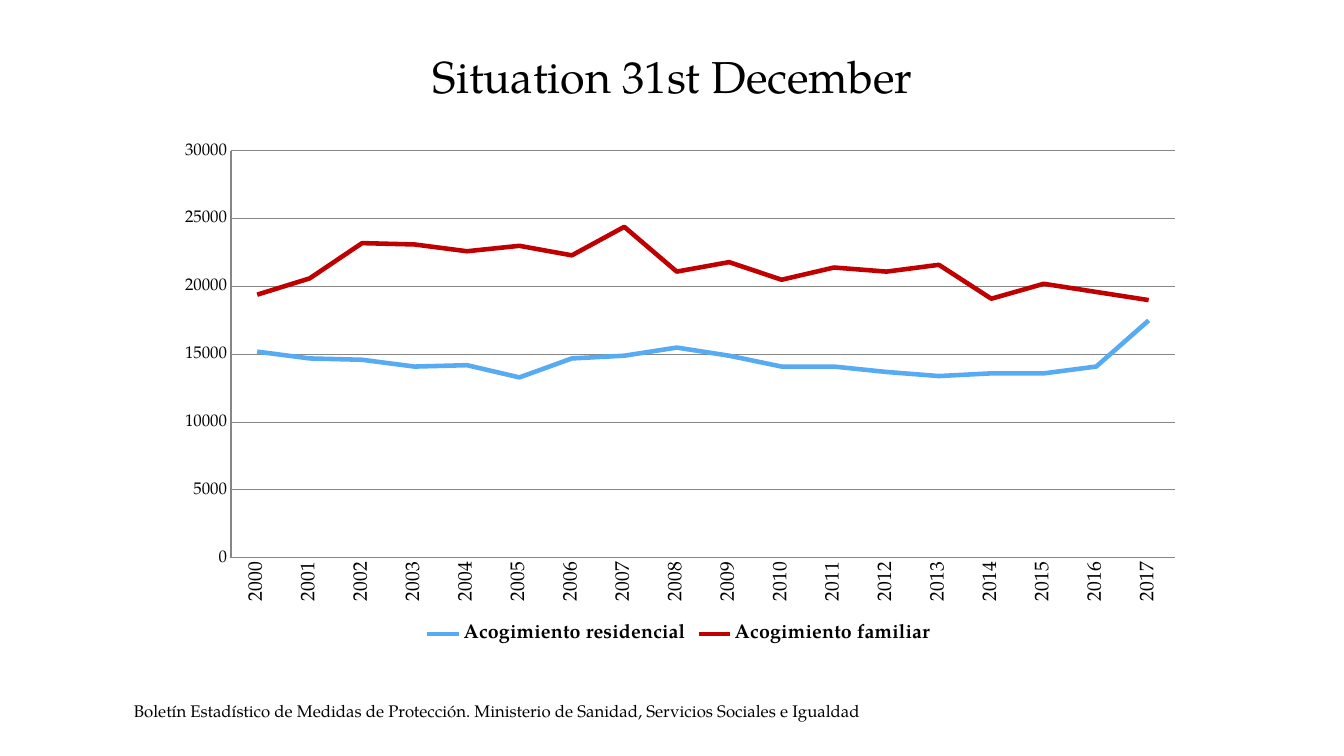
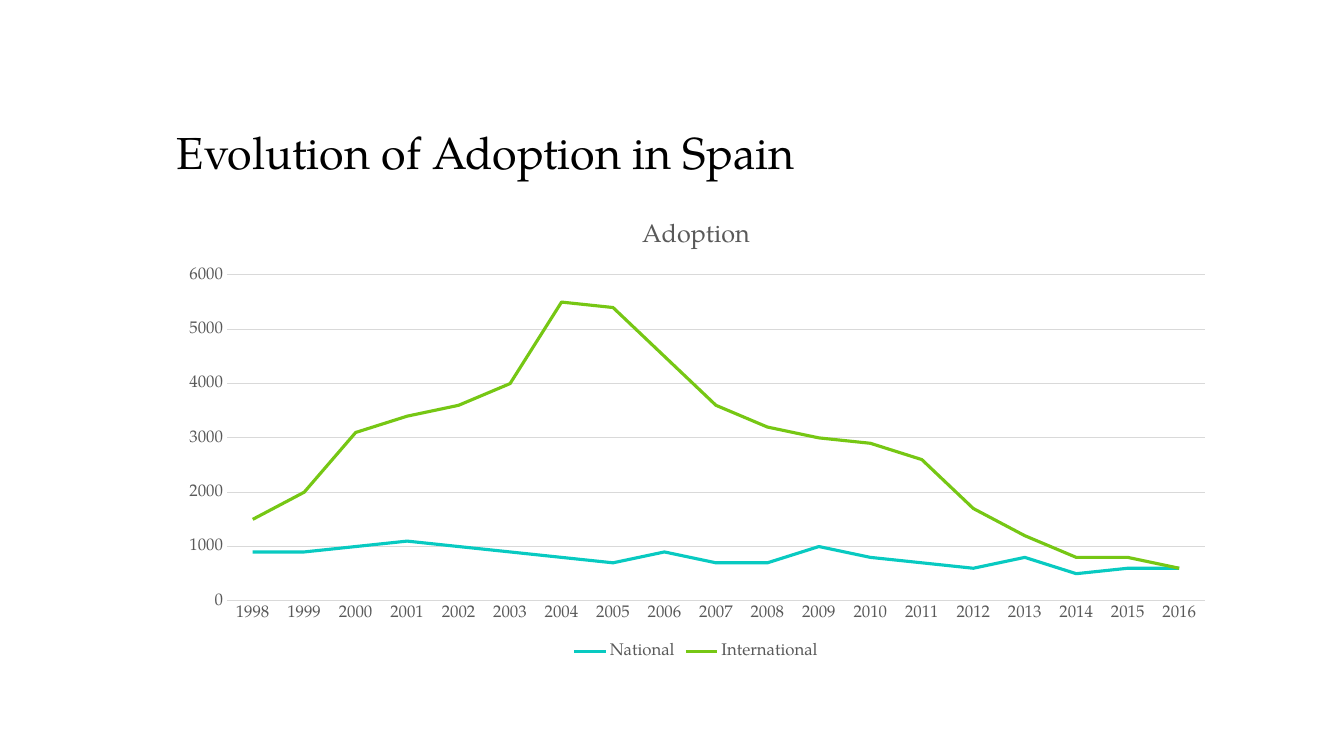
import pptx
import pptx.chart.data
import pptx.dml.color
import pptx.enum.chart
import pptx.enum.text
import pptx.oxml
import pptx.oxml.ns
import pptx.util

PX = 914400 / 100.8  # EMU per px
FONT = "TeX Gyre Pagella"
BLACK, GREY, PALE, MID = "000000", "595959", "D9D9D9", "868686"
XL = pptx.enum.chart
ALIGN = pptx.enum.text.PP_ALIGN
ANCHOR = pptx.enum.text.MSO_ANCHOR


def px(n):
    return pptx.util.Emu(round(n * PX))


def rgb(color):
    return pptx.dml.color.RGBColor.from_string(color)


def set_line(line, color, width):
    line.color.rgb = rgb(color)
    line.width = pptx.util.Pt(width)


class Deck:
    def __init__(self):
        self.prs = pptx.Presentation()
        self.prs.slide_width, self.prs.slide_height = px(1344), px(756)
        self.s = None

    def add_slide(self):
        self.s = self.prs.slides.add_slide(self.prs.slide_layouts[6])

    def style(self, font, size, color=BLACK, bold=False):
        font.name, font.size, font.bold = FONT, pptx.util.Pt(size), bold
        font.color.rgb = rgb(color)

    def text(self, box, text, size, align=ALIGN.LEFT, anchor=ANCHOR.TOP, spacing=1.0):
        tf = self.s.shapes.add_textbox(*map(px, box)).text_frame
        tf.word_wrap, tf.vertical_anchor = True, anchor
        p = tf.paragraphs[0]
        p.alignment, p.line_spacing = align, spacing
        r = p.add_run()
        r.text = text
        self.style(r.font, size)

    def title(self, box, text, align=ALIGN.LEFT):
        self.text(box, text, 32, align, ANCHOR.BOTTOM, 0.9)

    def line_chart(self, box, plot, cats, series, width, top, step, color, grid,
                   title=None, legend_size=12, legend_bold=False,
                   cat_size=12, upright=False, value_line=False):
        data = pptx.chart.data.CategoryChartData(number_format="General")
        data.categories = cats
        for name, _, vals in series:
            data.add_series(name, vals)
        chart = self.s.shapes.add_chart(
            XL.XL_CHART_TYPE.LINE, *map(px, box), data).chart
        self.style(chart.font, 12, color)

        # Title and legend
        chart.has_title = title is not None
        if title:
            r = chart.chart_title.text_frame.paragraphs[0].add_run()
            r.text = title
            self.style(r.font, 18, color)
            chart.chart_title.include_in_layout = False
        chart.has_legend = True
        chart.legend.position = XL.XL_LEGEND_POSITION.BOTTOM
        chart.legend.include_in_layout = False
        self.style(chart.legend.font, legend_size, color, legend_bold)

        # Axes
        cat, val = chart.category_axis, chart.value_axis
        for axis, size in ((cat, cat_size), (val, 12)):
            axis.major_tick_mark = axis.minor_tick_mark = XL.XL_TICK_MARK.NONE
            self.style(axis.tick_labels.font, size, color)
            set_line(axis.format.line, grid, 0.75)
        if not value_line:
            val.format.line.fill.background()
        val.minimum_scale, val.maximum_scale, val.major_unit = 0, top, step
        val.has_major_gridlines = True
        set_line(val.major_gridlines.format.line, grid, 0.75)
        if upright:
            body = cat._element.find(pptx.oxml.ns.qn("c:txPr"))[0]
            body.set("rot", "-5400000")
            body.set("vert", "horz")

        # Series
        chart.plots[0].vary_by_categories = False
        for line, (_, line_color, _) in zip(chart.plots[0].series, series):
            line.smooth = False
            line.marker.style = XL.XL_MARKER_STYLE.NONE
            set_line(line.format.line, line_color, width)
        self.place_plot(chart, box, plot)

    def place_plot(self, chart, box, plot):
        """Fix the inner plot area, given in slide px."""
        x, y, w, h = box
        left, top, pw, ph = plot
        parts = {"x": (left - x) / w, "y": (top - y) / h, "w": pw / w, "h": ph / h}
        modes = '<c:xMode val="edge"/><c:yMode val="edge"/>'
        values = "".join(f'<c:{k} val="{v:.4f}"/>' for k, v in parts.items())
        layout = pptx.oxml.parse_xml(
            f'<c:layout {pptx.oxml.ns.nsdecls("c")}><c:manualLayout>'
            f'<c:layoutTarget val="inner"/>{modes}{values}'
            '</c:manualLayout></c:layout>')
        area = chart._chartSpace.chart.plotArea
        for old in area.findall(pptx.oxml.ns.qn("c:layout")):
            area.remove(old)
        area.insert(0, layout)


def years(first, last):
    return [str(year) for year in range(first, last + 1)]


def main():
    deck = Deck()

    # Children in care at year end
    deck.add_slide()
    deck.line_chart(
        (163, 132, 1032, 516), (231, 151, 944, 407), years(2000, 2017),
        [("Acogimiento residencial", "56ABF3",
          [15200, 14700, 14600, 14100, 14200, 13300, 14700, 14900, 15500,
           14900, 14100, 14100, 13700, 13400, 13600, 13600, 14100, 17500]),
         ("Acogimiento familiar", "C00000",
          [19400, 20600, 23200, 23100, 22600, 23000, 22300, 24400, 21100,
           21800, 20500, 21400, 21100, 21600, 19100, 20200, 19600, 19000])],
        width=3.25, top=30000, step=5000, color=BLACK, grid=MID,
        legend_size=14, legend_bold=True, cat_size=14, upright=True,
        value_line=True)
    deck.title((68, 30, 1210, 78), "Situation 31st December", ALIGN.CENTER)
    deck.text((124, 696, 905, 30),
              "Boletín Estadístico de Medidas de Protección. "
              "Ministerio de Sanidad, Servicios Sociales e Igualdad", 12)

    # Adoptions by year
    deck.add_slide()
    deck.title((167, 58, 1058, 126), "Evolution of Adoption in Spain")
    deck.line_chart(
        (167, 202, 1058, 462), (227, 275, 978, 326), years(1998, 2016),
        [("National", "08CAC1",
          [900, 900, 1000, 1100, 1000, 900, 800, 700, 900, 700,
           700, 1000, 800, 700, 600, 800, 500, 600, 600]),
         ("International", "76C714",
          [1500, 2000, 3100, 3400, 3600, 4000, 5500, 5400, 4500, 3600,
           3200, 3000, 2900, 2600, 1700, 1200, 800, 800, 600])],
        width=2.25, top=6000, step=1000, color=GREY, grid=PALE,
        title="Adoption")

    deck.prs.save("out.pptx")


if __name__ == "__main__":
    main()
